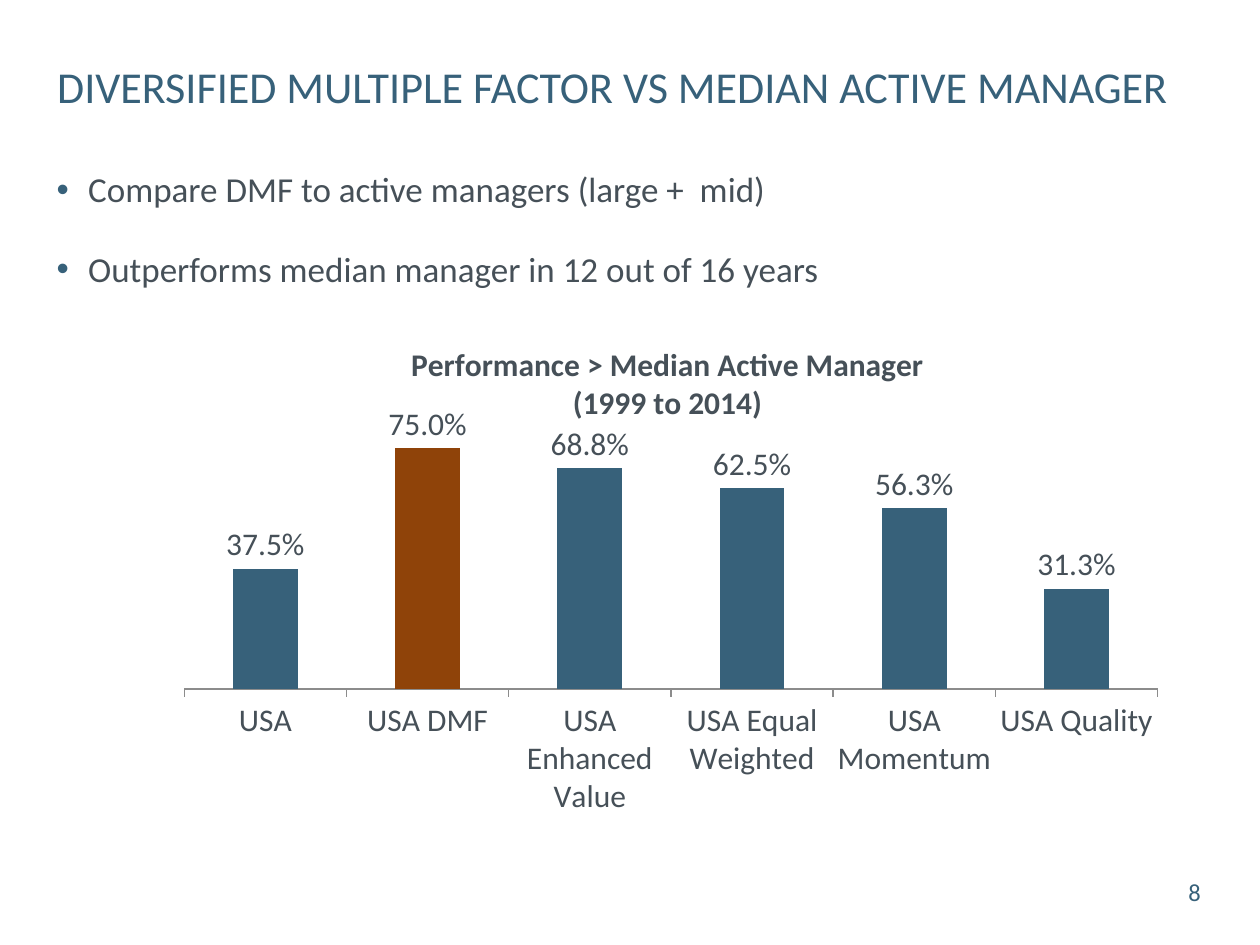
from lxml import etree
from pptx import Presentation
from pptx.chart.data import CategoryChartData
from pptx.dml.color import RGBColor
from pptx.enum.chart import XL_CHART_TYPE, XL_LABEL_POSITION, XL_TICK_LABEL_POSITION, XL_TICK_MARK
from pptx.enum.text import MSO_ANCHOR, MSO_AUTO_SIZE, PP_ALIGN
from pptx.oxml.ns import qn
from pptx.util import Inches, Pt

PIXELS_PER_INCH = 126
FONT = "Calibri"
BLUE = RGBColor(0x37, 0x61, 0x7A)
BROWN = RGBColor(0x8F, 0x43, 0x09)
SLATE = RGBColor(0x46, 0x50, 0x58)
GRAY = RGBColor(0x8C, 0x8C, 0x8C)

BULLETS = [
    "Compare DMF to active managers (large +  mid)",
    "Outperforms median manager in 12 out of 16 years",
]
CHART_TITLE = ["Performance > Median Active Manager", "(1999 to 2014)"]
SHARES = {
    "USA": 0.375,
    "USA DMF": 0.75,
    "USA Enhanced Value": 0.688,
    "USA Equal Weighted": 0.625,
    "USA Momentum": 0.563,
    "USA Quality": 0.313,
}
HIGHLIGHT = "USA DMF"


def px(length):
    return round(Inches(length / PIXELS_PER_INCH))


def place(shape, left, top, width, height):
    shape.left, shape.top = px(left), px(top)
    shape.width, shape.height = px(width), px(height)


def format_font(font, size, color, bold=False):
    font.name = FONT
    font.size = Pt(size)
    font.bold = bold
    font.color.rgb = color


def add_title(slide, text):
    title = slide.shapes.title
    place(title, 32, 32, 1197, 107)
    frame = title.text_frame
    frame.text = text
    frame.auto_size = MSO_AUTO_SIZE.NONE
    frame.vertical_anchor = MSO_ANCHOR.MIDDLE
    frame.margin_left = Inches(0.2)
    paragraph = frame.paragraphs[0]
    paragraph.alignment = PP_ALIGN.LEFT
    format_font(paragraph.font, 25.2, BLUE)


def add_bullet(paragraph, color):
    properties = paragraph._p.get_or_add_pPr()
    properties.set("marL", str(Inches(0.25)))
    properties.set("indent", str(-Inches(0.25)))
    bullet_color = etree.SubElement(properties, qn("a:buClr"))
    etree.SubElement(bullet_color, qn("a:srgbClr"), val=str(color))
    etree.SubElement(properties, qn("a:buFont"), typeface="Arial")
    etree.SubElement(properties, qn("a:buChar"), char="•")


def add_bullet_list(slide, items):
    body = slide.placeholders[1]
    place(body, 44, 166, 1103, 149)
    frame = body.text_frame
    frame.text = "\n".join(items)
    frame.auto_size = MSO_AUTO_SIZE.NONE
    for index, paragraph in enumerate(frame.paragraphs):
        add_bullet(paragraph, BLUE)
        paragraph.line_spacing = 0.9
        paragraph.space_before = Pt(18 if index else 0)
        paragraph.space_after = Pt(6)
        format_font(paragraph.font, 20, SLATE)


def set_layout(element, inner=False, **fractions):
    layout = element.find(qn("c:layout"))
    if layout is None:
        layout = etree.Element(qn("c:layout"))
        element.insert(0, layout)
    manual = etree.SubElement(layout, qn("c:manualLayout"))
    if inner:
        etree.SubElement(manual, qn("c:layoutTarget"), val="inner")
    for mode in ("xMode", "yMode"):
        etree.SubElement(manual, qn(f"c:{mode}"), val="edge")
    for name, fraction in fractions.items():
        etree.SubElement(manual, qn(f"c:{name}"), val=str(fraction))


def format_chart_title(chart, lines):
    chart.has_title = True
    title = chart.chart_title
    title.text_frame.text = "\n".join(lines)
    title.include_in_layout = False
    for paragraph in title.text_frame.paragraphs:
        paragraph.alignment = PP_ALIGN.CENTER
        format_font(paragraph.font, 18, SLATE, bold=True)
    set_layout(title._element, x=0.24, y=0.05)


def format_axes(chart):
    value_axis = chart.value_axis
    value_axis.visible = False
    value_axis.has_major_gridlines = False
    value_axis.minimum_scale = 0
    value_axis.maximum_scale = 0.8
    category_axis = chart.category_axis
    category_axis.major_tick_mark = XL_TICK_MARK.OUTSIDE
    category_axis.tick_label_position = XL_TICK_LABEL_POSITION.LOW
    category_axis.format.line.color.rgb = GRAY
    category_axis.format.line.width = Pt(0.75)


def format_columns(plot):
    plot.gap_width = 150
    plot.vary_by_categories = False
    series = plot.series[0]
    highlighted = series.points[list(SHARES).index(HIGHLIGHT)]
    for item, color in ((series, BLUE), (highlighted, BROWN)):
        item.format.fill.solid()
        item.format.fill.fore_color.rgb = color
    plot.has_data_labels = True
    labels = plot.data_labels
    labels.show_value = True
    labels.number_format = "0.0%"
    labels.number_format_is_linked = False
    labels.position = XL_LABEL_POSITION.OUTSIDE_END
    format_font(labels.font, 18, SLATE)


def add_performance_chart(slide):
    data = CategoryChartData(number_format="0.0%")
    data.categories = list(SHARES)
    data.add_series("Series 1", list(SHARES.values()))
    chart = slide.shapes.add_chart(
        XL_CHART_TYPE.COLUMN_CLUSTERED, px(164), px(314), px(1014), px(514), data
    ).chart
    chart.has_legend = False
    format_font(chart.font, 18, SLATE)
    format_chart_title(chart, CHART_TITLE)
    format_axes(chart)
    format_columns(chart.plots[0])
    plot_area = chart._chartSpace.chart.plotArea
    set_layout(plot_area, inner=True, x=0.02, y=0.23, w=0.96, h=0.5)


def add_page_number(slide, number):
    box = slide.shapes.add_textbox(px(1176), px(871), px(54), px(43))
    frame = box.text_frame
    frame.text = number
    format_font(frame.paragraphs[0].font, 14, BLUE)


def main():
    presentation = Presentation()
    presentation.slide_width = Inches(10)
    presentation.slide_height = Inches(7.5)
    slide = presentation.slides.add_slide(presentation.slide_layouts[1])
    add_title(slide, "DIVERSIFIED MULTIPLE FACTOR VS MEDIAN ACTIVE MANAGER")
    add_bullet_list(slide, BULLETS)
    add_performance_chart(slide)
    add_page_number(slide, "8")
    presentation.save("out.pptx")


if __name__ == "__main__":
    main()
